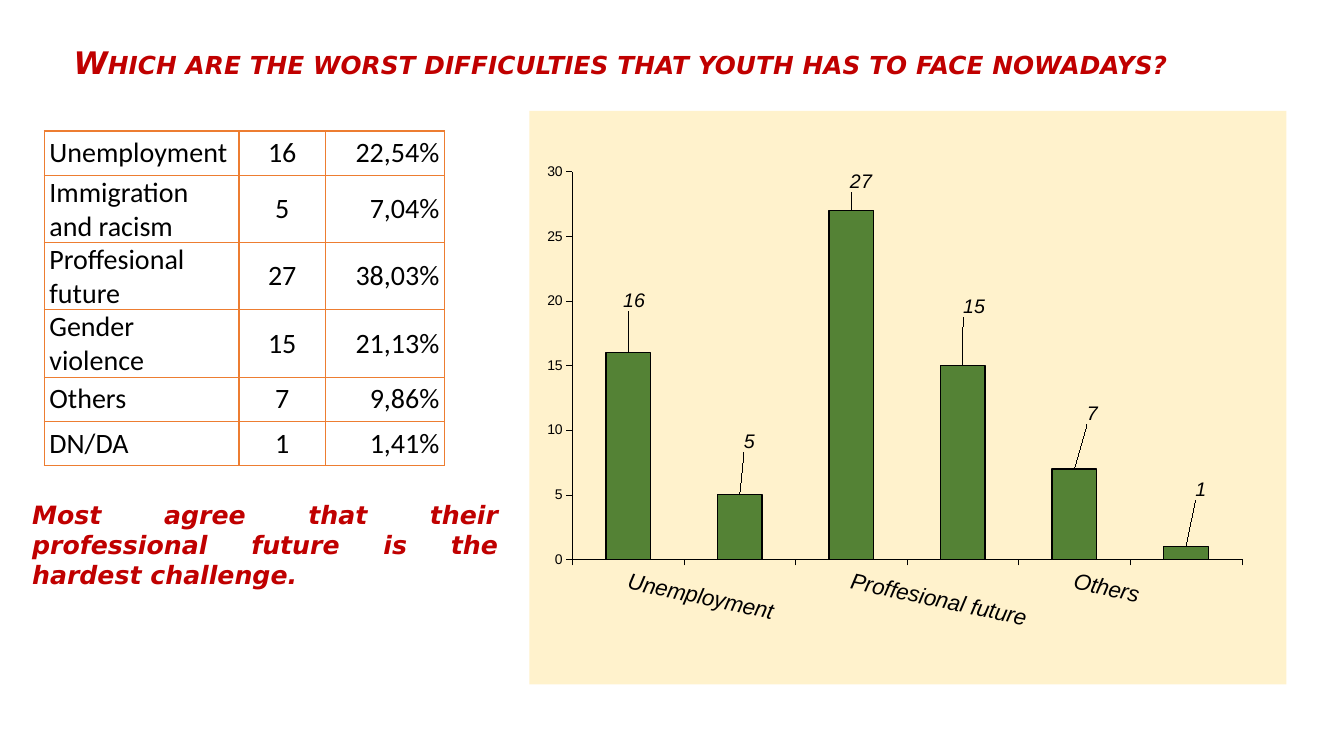
import pptx
import pptx.util
import pptx.dml.color
import pptx.chart.data
import pptx.enum.chart
import pptx.enum.text
import pptx.oxml
import pptx.oxml.ns

Pt = pptx.util.Pt
qn = pptx.oxml.ns.qn
PP_ALIGN = pptx.enum.text.PP_ALIGN
ANCHOR = pptx.enum.text.MSO_ANCHOR
XL = pptx.enum.chart

COLORS = {"text": "000000", "accent": "C00000", "border": "ED7D31",
          "bar": "548235", "panel": "FFF2CC"}
RGB = {name: pptx.dml.color.RGBColor.from_string(h) for name, h in COLORS.items()}

ROWS = [("Unemployment", 16, "22,54%"),
        ("Immigration and racism", 5, "7,04%"),
        ("Proffesional future", 27, "38,03%"),
        ("Gender violence", 15, "21,13%"),
        ("Others", 7, "9,86%"),
        ("DN/DA", 1, "1,41%")]
LABEL_SHIFTS = [(0.8, -6.5), (1.3, -6.6), (1.3, -2.4),
                (1.5, -7.7), (2.4, -7), (2, -7.3)]

prs = pptx.Presentation()
prs.slide_width = pptx.util.Inches(13.33)
prs.slide_height = pptx.util.Inches(7.5)
X = prs.slide_width / 100
Y = prs.slide_height / 100


def set_font(font, name, size, color="text", bold=False, italic=False):
    font.name = name
    font.size = Pt(size)
    font.color.rgb = RGB[color]
    font.bold = bold
    font.italic = italic


def make_layout(**parts):
    body = "".join(f'<c:{k} val="{v}"/>' for k, v in parts.items())
    return pptx.oxml.parse_xml(
        f'<c:layout {pptx.oxml.ns.nsdecls("c")}><c:manualLayout>{body}'
        '</c:manualLayout></c:layout>')


slide = prs.slides.add_slide(prs.slide_layouts[5])

title = slide.shapes.title
title.left, title.top = int(4.73 * X), int(5.6 * Y)
title.width, title.height = int(89.12 * X), int(9.07 * Y)
tf = title.text_frame
tf.auto_size = pptx.enum.text.MSO_AUTO_SIZE.NONE
tf.vertical_anchor = ANCHOR.TOP
p = tf.paragraphs[0]
r = p.add_run()
r.text = "Which are the worst difficulties that youth has to face nowadays?"
r._r.get_or_add_rPr().set("cap", "small")
p.alignment = PP_ALIGN.LEFT
p.line_spacing = 0.9
set_font(p.font, "DejaVu Sans", 22.2, "accent", True, True)

note = slide.shapes.add_textbox(int(1.65 * X), int(65.33 * Y),
                                int(36.16 * X), int(13.47 * Y))
tf = note.text_frame
tf.word_wrap = True
tf.auto_size = pptx.enum.text.MSO_AUTO_SIZE.SHAPE_TO_FIT_TEXT
p = tf.paragraphs[0]
p.text = "Most agree that their professional future is the hardest challenge."
p.alignment = PP_ALIGN.JUSTIFY
set_font(p.font, "DejaVu Sans", 18, "accent", True, True)

col_shares = [14.48, 6.45, 8.85]
row_share = 5.87
table = slide.shapes.add_table(
    len(ROWS), len(col_shares), int(3.3 * X), int(17.33 * Y),
    int(sum(col_shares) * X), int(row_share * len(ROWS) * Y)).table
table.first_row = table.horz_banding = False
for col, share in zip(table.columns, col_shares):
    col.width = int(share * X)
aligns = [PP_ALIGN.LEFT, PP_ALIGN.CENTER, PP_ALIGN.RIGHT]
for i, row in enumerate(ROWS):
    table.rows[i].height = int(row_share * Y)
    for j, value in enumerate(row):
        cell = table.cell(i, j)
        cell.fill.background()
        cell.vertical_anchor = ANCHOR.MIDDLE
        cell.margin_left = cell.margin_right = pptx.util.Inches(0.05)
        cell.margin_top = cell.margin_bottom = 0
        p = cell.text_frame.paragraphs[0]
        p.text = str(value)
        p.alignment = aligns[j]
        set_font(p.font, "Calibri", 20)
        tcPr = cell._tc.get_or_add_tcPr()
        for k, side in enumerate(["lnL", "lnR", "lnT", "lnB"]):
            tcPr.insert(k, pptx.oxml.parse_xml(
                f'<a:{side} {pptx.oxml.ns.nsdecls("a")} w="12700"><a:solidFill>'
                f'<a:srgbClr val="{COLORS["border"]}"/></a:solidFill></a:{side}>'))

data = pptx.chart.data.CategoryChartData()
data.categories = [row[0] for row in ROWS]
data.add_series("Series 1", [row[1] for row in ROWS])
chart = slide.shapes.add_chart(
    XL.XL_CHART_TYPE.COLUMN_CLUSTERED, int(39.38 * X), int(14.67 * Y),
    int(56.34 * X), int(75.87 * Y), data).chart
chart.has_title = False
chart.has_legend = False
set_font(chart.font, "Arial", 10)
chart._chartSpace.find(qn("c:chart")).addnext(pptx.oxml.parse_xml(
    f'<c:spPr {pptx.oxml.ns.nsdecls("c", "a")}><a:solidFill>'
    f'<a:srgbClr val="{COLORS["panel"]}"/></a:solidFill>'
    '<a:ln><a:noFill/></a:ln></c:spPr>'))

plot_area = chart._chartSpace.find(".//" + qn("c:plotArea"))
for old in plot_area.findall(qn("c:layout")):
    plot_area.remove(old)
plot_area.insert(0, make_layout(layoutTarget="inner", xMode="edge", yMode="edge",
                                x=5.7 / 100, y=10.6 / 100,
                                w=88.4 / 100, h=67.6 / 100))

cat_axis, val_axis = chart.category_axis, chart.value_axis
for axis, size, italic in [(cat_axis, 16, True), (val_axis, 10, False)]:
    axis.has_major_gridlines = False
    axis.major_tick_mark = XL.XL_TICK_MARK.OUTSIDE
    axis.minor_tick_mark = XL.XL_TICK_MARK.NONE
    axis.format.line.color.rgb = RGB["text"]
    axis.format.line.width = Pt(0.25)
    set_font(axis.tick_labels.font, "Arial", size, italic=italic)
val_axis.minimum_scale, val_axis.maximum_scale, val_axis.major_unit = 0, 30, 5
cat_xml = cat_axis._element
cat_xml.find(qn("c:txPr")).find(qn("a:bodyPr")).set("rot", str(12 * 60000))
cat_xml.find(qn("c:noMultiLvlLbl")).addprevious(pptx.oxml.parse_xml(
    f'<c:tickLblSkip {pptx.oxml.ns.nsdecls("c")} val="2"/>'))

plot = chart.plots[0]
plot.gap_width = 150
plot.vary_by_categories = False
series = plot.series[0]
series.format.fill.solid()
series.format.fill.fore_color.rgb = RGB["bar"]
series.format.line.color.rgb = RGB["text"]
series.format.line.width = Pt(1)
series.data_labels.show_value = True
set_font(series.data_labels.font, "Arial", 14, italic=True)
for i in range(len(ROWS)):
    label = series.points[i].data_label
    set_font(label.font, "Arial", 14, italic=True)
    label.position = XL.XL_LABEL_POSITION.OUTSIDE_END
label_xml = series._element.findall(".//" + qn("c:dLbl"))
for dLbl, (dx, dy) in zip(label_xml, LABEL_SHIFTS):
    dLbl.find(qn("c:idx")).addnext(make_layout(x=dx / 100, y=dy / 100))

prs.save("out.pptx")
